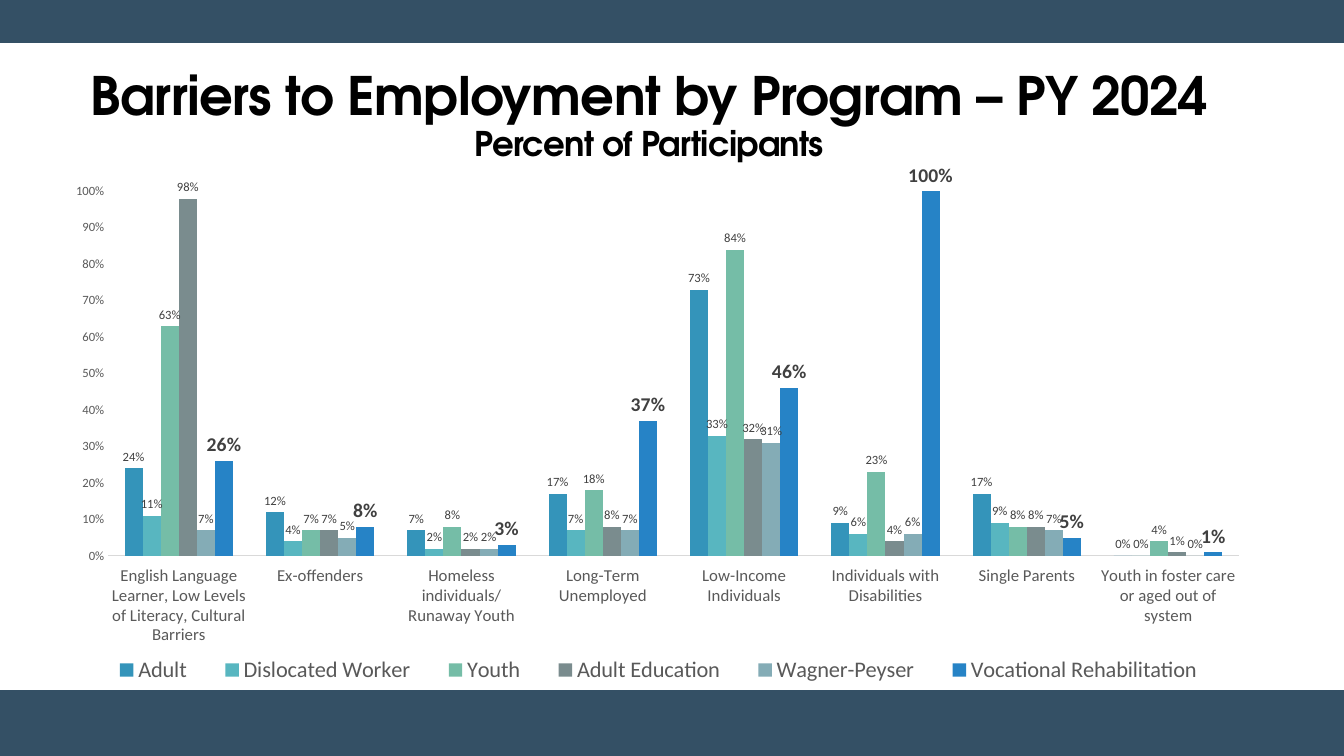
from lxml import etree
from pptx import Presentation
from pptx import util as u
from pptx.chart.data import CategoryChartData
from pptx.dml.color import RGBColor
from pptx.enum import chart as ch, shapes, text
from pptx.oxml.ns import qn

COLORS = {
    "band": "345065", "title": "000000", "axis_text": "595959",
    "axis_line": "D9D9D9", "label": "404040",
    "Adult": "3494BA", "Dislocated Worker": "58B6C0", "Youth": "75BDA7",
    "Adult Education": "7A8C8E", "Wagner-Peyser": "84ACB6",
    "Vocational Rehabilitation": "2683C6",
}

BARRIERS = [
    "English Language Learner, Low Levels of Literacy, Cultural Barriers",
    "Ex-offenders",
    "Homeless individuals/Runaway Youth",
    "Long-Term Unemployed",
    "Low-Income Individuals",
    "Individuals with Disabilities",
    "Single Parents",
    "Youth in foster care or aged out of system",
]

PROGRAMS = {
    "Adult": (0.24, 0.12, 0.07, 0.17, 0.73, 0.09, 0.17, 0),
    "Dislocated Worker": (0.11, 0.04, 0.02, 0.07, 0.33, 0.06, 0.09, 0),
    "Youth": (0.63, 0.07, 0.08, 0.18, 0.84, 0.23, 0.08, 0.04),
    "Adult Education": (0.98, 0.07, 0.02, 0.08, 0.32, 0.04, 0.08, 0.01),
    "Wagner-Peyser": (0.07, 0.05, 0.02, 0.07, 0.31, 0.06, 0.07, 0),
    "Vocational Rehabilitation": (0.26, 0.08, 0.03, 0.37, 0.46, 1, 0.05, 0.01),
}
HIGHLIGHT = "Vocational Rehabilitation"


def color(name):
    return RGBColor.from_string(COLORS[name])


def inches(box):
    return [u.Inches(length) for length in box]


def style(font, size, tint, bold=False, face="Calibri"):
    font.name = face
    font.bold = bold
    font.color.rgb = color(tint)
    if size:
        font.size = u.Pt(size)


def add_band(slide, box):
    band = slide.shapes.add_shape(shapes.MSO_SHAPE.RECTANGLE, *inches(box))
    band.shadow.inherit = False
    band.fill.solid()
    band.fill.fore_color.rgb = color("band")
    band.line.color.rgb = color("band")
    band.line.width = u.Pt(1)


def add_heading(slide, box):
    frame = slide.shapes.add_textbox(*inches(box)).text_frame
    frame.word_wrap = True
    frame.vertical_anchor = text.MSO_ANCHOR.TOP
    frame.margin_top = u.Inches(0.65)
    heading = frame.paragraphs[0]
    heading.alignment = text.PP_ALIGN.CENTER
    heading.line_spacing = 0.9
    style(heading.font, None, "title", True, "TeX Gyre Adventor")
    title = heading.add_run()
    title.text = "Barriers to Employment by Program – PY 2024"
    title.font.size = u.Pt(37.8)
    heading.add_line_break()
    subtitle = heading.add_run()
    subtitle.text = "Percent of Participants"
    subtitle.font.size = u.Pt(24.3)
    for run in (title, subtitle):
        run.font._element.set("spc", "-50")


def set_layout(parent, index, fractions, inner=False):
    for old in parent.findall(qn("c:layout")):
        parent.remove(old)
    layout = etree.Element(qn("c:layout"))
    manual = etree.SubElement(layout, qn("c:manualLayout"))
    settings = [("layoutTarget", "inner")] if inner else []
    settings += [("xMode", "edge"), ("yMode", "edge")]
    settings += zip("xywh", fractions)
    for tag, value in settings:
        etree.SubElement(manual, qn(f"c:{tag}")).set("val", str(value))
    parent.insert(index, layout)


def style_axes(chart):
    barriers = chart.category_axis
    share = chart.value_axis
    for axis, size in ((barriers, 12), (share, 9)):
        axis.has_major_gridlines = False
        axis.major_tick_mark = ch.XL_TICK_MARK.NONE
        axis.minor_tick_mark = ch.XL_TICK_MARK.NONE
        style(axis.tick_labels.font, size, "axis_text")
    barriers.tick_label_position = ch.XL_TICK_LABEL_POSITION.LOW
    barriers.format.line.color.rgb = color("axis_line")
    barriers.format.line.width = u.Pt(0.75)
    share.minimum_scale, share.maximum_scale, share.major_unit = 0, 1, 0.1
    share.format.line.fill.background()
    share.tick_labels.number_format = "0%"
    share.tick_labels.number_format_is_linked = False


def style_program(program):
    program.format.fill.solid()
    program.format.fill.fore_color.rgb = color(program.name)
    program.invert_if_negative = False
    labels = program.data_labels
    labels.show_value = True
    labels.number_format = "0%"
    labels.number_format_is_linked = False
    labels.position = ch.XL_LABEL_POSITION.OUTSIDE_END
    highlighted = program.name == HIGHLIGHT
    style(labels.font, 14 if highlighted else 9, "label", highlighted)


def add_barriers_chart(slide, box):
    data = CategoryChartData(number_format="0%")
    data.categories = BARRIERS
    for name, shares in PROGRAMS.items():
        data.add_series(name, shares)
    chart = slide.shapes.add_chart(
        ch.XL_CHART_TYPE.COLUMN_CLUSTERED, *inches(box), data).chart
    style(chart.font, 10, "title")
    chart.has_title = False
    plot = chart.plots[0]
    plot.gap_width = 182
    plot.overlap = 0
    plot.vary_by_categories = False
    style_axes(chart)
    for program in plot.series:
        style_program(program)
    chart.has_legend = True
    legend = chart.legend
    legend.position = ch.XL_LEGEND_POSITION.BOTTOM
    legend.include_in_layout = False
    style(legend.font, 16, "axis_text")
    plot_area = chart._chartSpace.chart.plotArea
    set_layout(plot_area, 0, (0.046, 0.048, 0.933, 0.687), inner=True)
    set_layout(legend._element, 1, (0.03, 0.91, 0.94, 0.08))


def main():
    deck = Presentation()
    deck.slide_width, deck.slide_height = inches((13.33, 7.5))
    slide = deck.slides.add_slide(deck.slide_layouts[6])
    add_band(slide, (0, 6.85, 13.33, 0.65))
    add_band(slide, (0, 0, 13.33, 0.42))
    add_heading(slide, (0.34, 0.04, 12.2, 1.32))
    add_barriers_chart(slide, (0.52, 1.62, 12.02, 5.29))
    deck.save("out.pptx")


if __name__ == "__main__":
    main()
